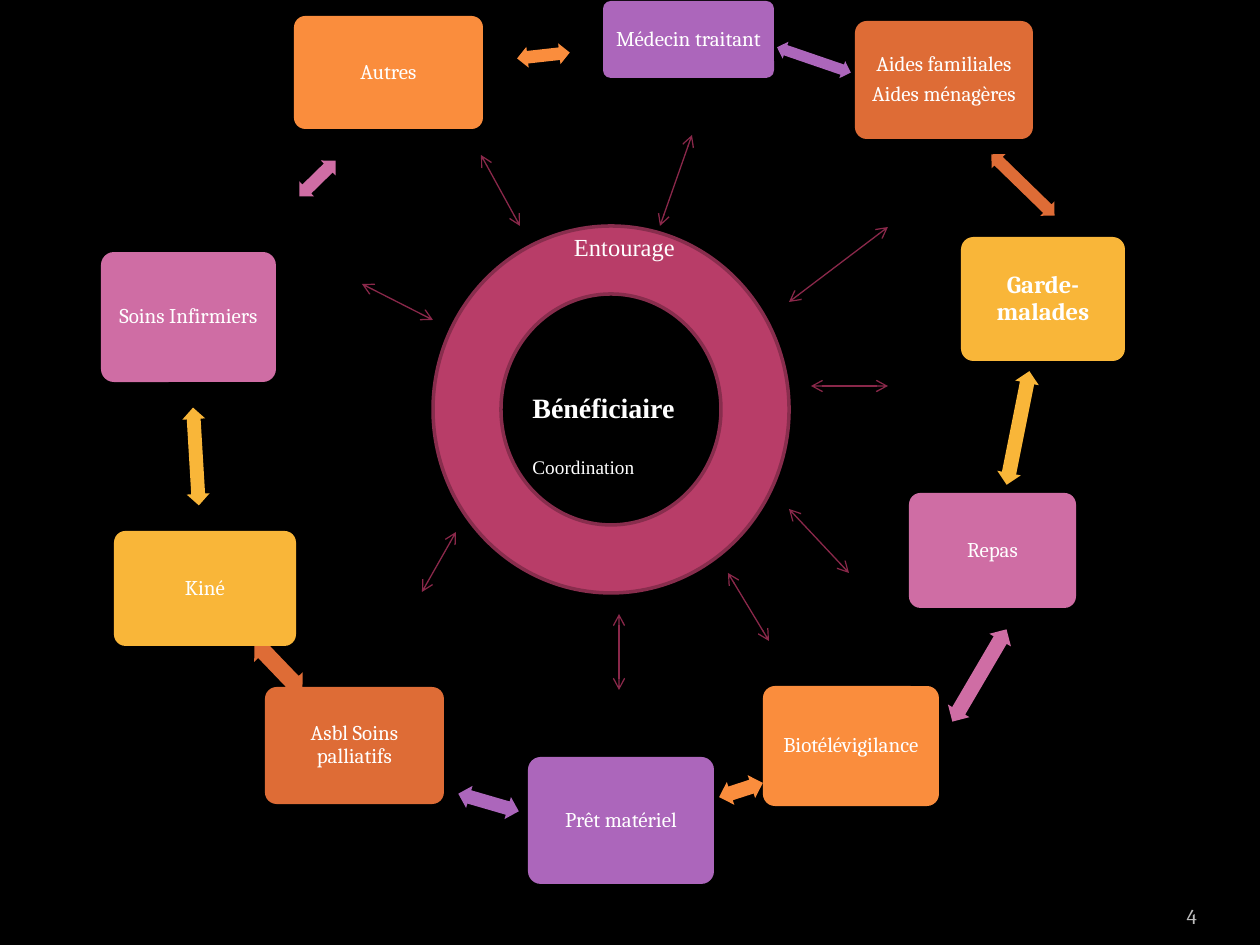
from collections import namedtuple

from lxml.etree import SubElement
from pptx import Presentation
from pptx.dml.color import RGBColor
from pptx.enum.shapes import MSO_CONNECTOR, MSO_SHAPE
from pptx.enum.text import MSO_ANCHOR, PP_ALIGN
from pptx.oxml.ns import qn
from pptx.util import Inches, Pt

SCALE = Inches(10) / 1260

BLACK = RGBColor(0x00, 0x00, 0x00)
WHITE = RGBColor(0xFF, 0xFF, 0xFF)
GREY = RGBColor(0xBD, 0xBD, 0xBD)
PURPLE = RGBColor(0xAC, 0x66, 0xBB)
RUST = RGBColor(0xDE, 0x6C, 0x36)
YELLOW = RGBColor(0xF9, 0xB6, 0x39)
PINK = RGBColor(0xCF, 0x6D, 0xA4)
ORANGE = RGBColor(0xFA, 0x8D, 0x3D)
RASPBERRY = RGBColor(0xB8, 0x3D, 0x68)
RING_EDGE = RGBColor(0x88, 0x2D, 0x4D)
SPOKE = RGBColor(0x8A, 0x28, 0x4A)
CYCLE_COLOURS = [PURPLE, RUST, YELLOW, PINK, ORANGE]

Box = namedtuple("Box", "left top width height")

# Clockwise: label, card, arrow to the next card, arrow rotation
SERVICES = [
    ("Médecin traitant", Box(503, 1, 171, 77), Box(675, 51, 78, 18), 18.9),
    ("Aides familiales\nAides ménagères", Box(755, 21, 178, 118), Box(879, 175, 88, 20), 44.2),
    ("Garde- malades", Box(861, 237, 164, 124), Box(860, 416, 116, 24), 101.3),
    ("Repas", Box(809, 493, 167, 115), Box(826, 663, 107, 25), 300.4),
    ("Biotélévigilance", Box(663, 686, 176, 120), Box(618, 778, 46, 24), 162),
    ("Prêt matériel", Box(428, 757, 186, 127), Box(357, 791, 63, 23), 196.2),
    ("Asbl Soins palliatifs", Box(165, 687, 179, 117), Box(144, 653, 69, 28), 226.2),
    ("Kiné", Box(14, 531, 182, 115), Box(47, 445, 98, 23), 266.6),
    ("Soins Infirmiers", Box(1, 252, 175, 130), Box(192, 168, 51, 21), 135.6),
    ("Autres", Box(194, 16, 189, 113), Box(417, 45, 53, 21), 353.7),
]
HIGHLIGHT = "Garde- malades"

# Outer end and inner end, measured from the ring's corner
SPOKES = [
    (-71, 58, 0, 94), (48, -71, 87, 0), (259, -91, 227, 0),
    (455, 1, 356, 76), (455, 160, 378, 160), (416, 347, 356, 283),
    (336, 415, 295, 347), (186, 464, 186, 388), (-11, 366, 23, 306),
]


def px(length):
    return round(length * SCALE)


def emu(box):
    return [px(length) for length in box]


def inside(region, part):
    return part._replace(left=region.left + part.left, top=region.top + part.top)


def add_filled(slide, preset, box, fill, adjustments):
    shape = slide.shapes.add_shape(preset, *emu(box))
    shape.shadow.inherit = False
    shape.fill.solid()
    shape.fill.fore_color.rgb = fill
    shape.line.fill.background()
    for index, value in enumerate(adjustments):
        shape.adjustments[index] = value
    return shape


def style(paragraph, size, font, colour=WHITE, bold=False):
    for run in paragraph.runs:
        run.font.size = Pt(size)
        run.font.name = font
        run.font.bold = bold
        run.font.color.rgb = colour


def add_text(slide, box, text):
    frame = slide.shapes.add_textbox(*emu(box)).text_frame
    frame.word_wrap = True
    frame.text = text
    return frame


def draw_card(slide, box, label, colour):
    card = add_filled(slide, MSO_SHAPE.ROUNDED_RECTANGLE, box, colour, [0.1])
    frame = card.text_frame
    frame.word_wrap = True
    frame.vertical_anchor = MSO_ANCHOR.MIDDLE
    frame.margin_left = frame.margin_right = px(10)
    frame.margin_top = frame.margin_bottom = px(10)
    frame.text = label
    strong = label == HIGHLIGHT
    for paragraph in frame.paragraphs:
        paragraph.alignment = PP_ALIGN.CENTER
        paragraph.line_spacing = 0.9
        paragraph.space_after = Pt(4.2)
        style(paragraph, 14 if strong else 12, "Cambria", bold=strong)


def draw_service_cycle(slide, region):
    for index, (label, card, arrow, rotation) in enumerate(SERVICES):
        colour = CYCLE_COLOURS[index % len(CYCLE_COLOURS)]
        draw_card(slide, inside(region, card), label, colour)
        link = add_filled(slide, MSO_SHAPE.LEFT_RIGHT_ARROW, inside(region, arrow),
                          colour, [0.6, 0.5])
        link.rotation = rotation


def draw_ring(slide, region):
    ring = add_filled(slide, MSO_SHAPE.DONUT, region, RASPBERRY, [0.191])
    ring.line.color.rgb = RING_EDGE
    ring.line.width = Pt(2)

    # Centre of the ring
    centre = add_text(slide, inside(region, Box(87, 94, 171, 164)),
                      "Bénéficiaire\nCoordination")
    centre.margin_top = px(71)
    beneficiary, coordination = centre.paragraphs
    style(beneficiary, 16, "Times New Roman", bold=True)
    style(coordination, 11, "Times New Roman")
    coordination.space_before = Pt(17.5)

    # Band of the ring
    circle = add_text(slide, inside(region, Box(67, 0, 209, 43)), "Entourage")
    circle.margin_left = px(74)
    style(circle.paragraphs[0], 14, "Times New Roman")


def draw_spokes(slide, region):
    for outer_x, outer_y, inner_x, inner_y in SPOKES:
        spoke = slide.shapes.add_connector(
            MSO_CONNECTOR.STRAIGHT,
            px(region.left + outer_x), px(region.top + outer_y),
            px(region.left + inner_x), px(region.top + inner_y))
        spoke.line.color.rgb = SPOKE
        spoke.line.width = Pt(0.75)
        outline = spoke.line._get_or_add_ln()
        for end in ("a:headEnd", "a:tailEnd"):
            SubElement(outline, qn(end), type="arrow")
        SubElement(spoke._element.spPr, qn("a:effectLst"))


def draw_page_number(slide, region):
    frame = add_text(slide, region, "4")
    frame.margin_left = frame.margin_right = 0
    frame.vertical_anchor = MSO_ANCHOR.BOTTOM
    frame.paragraphs[0].alignment = PP_ALIGN.RIGHT
    style(frame.paragraphs[0], 12, "Cambria", GREY)


def main():
    deck = Presentation()
    deck.slide_width, deck.slide_height = px(1260), px(945)
    slide = deck.slides.add_slide(deck.slide_layouts[6])
    slide.background.fill.solid()
    slide.background.fill.fore_color.rgb = BLACK

    ring = Box(433, 226, 356, 367)
    draw_page_number(slide, Box(1092, 885, 105, 50))
    draw_service_cycle(slide, Box(100, 0, 1025, 884))
    draw_ring(slide, ring)
    draw_spokes(slide, ring)
    deck.save("out.pptx")


if __name__ == "__main__":
    main()
